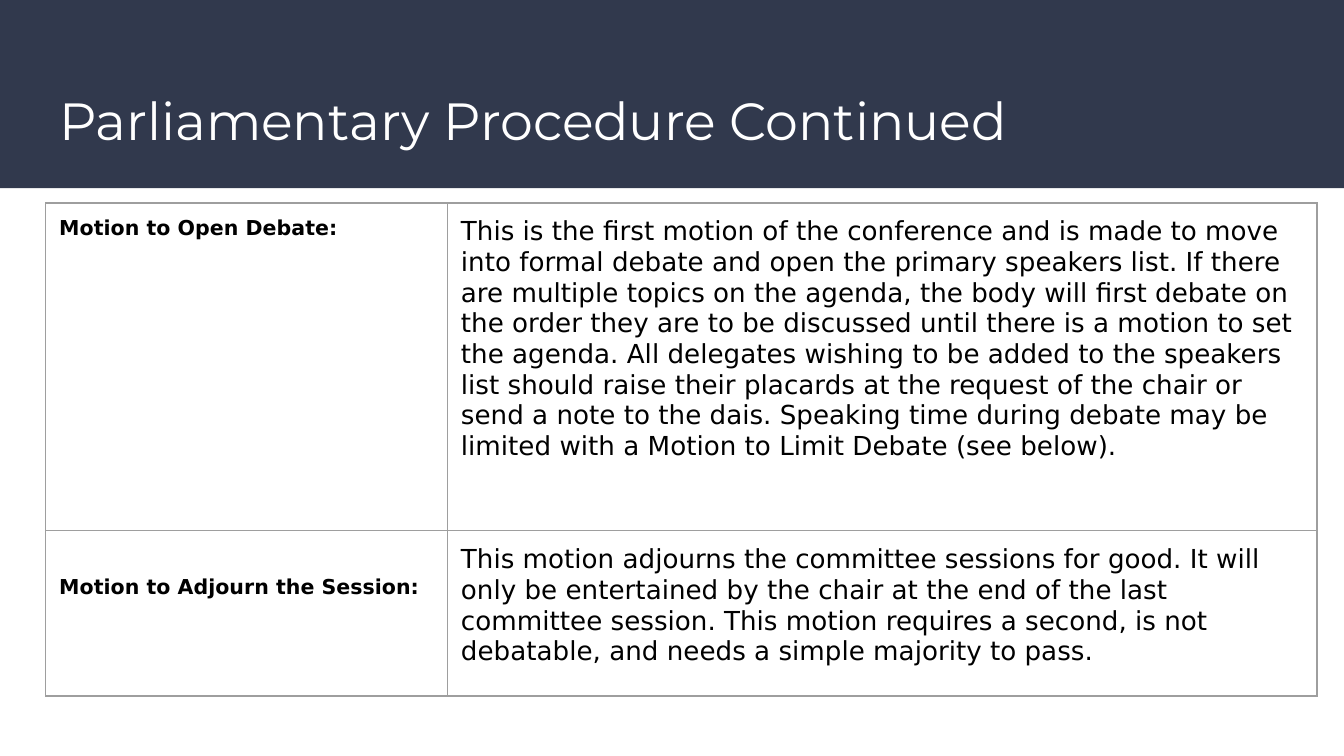
"""Build the parliamentary procedure slide with its table of motions."""
from dataclasses import dataclass

from lxml import etree
from pptx import Presentation
from pptx import util as u
from pptx.dml.color import RGBColor
from pptx.enum import shapes, text
from pptx.oxml.ns import qn

TITLE = "Parliamentary Procedure Continued"
MOTIONS = [
    ("Motion to Open Debate:",
     "This is the first motion of the conference and is made to move into formal "
     "debate and open the primary speakers list. If there are multiple topics on "
     "the agenda, the body will first debate on the order they are to be discussed "
     "until there is a motion to set the agenda. All delegates wishing to be added "
     "to the speakers list should raise their placards at the request of the chair "
     "or send a note to the dais. Speaking time during debate may be limited with "
     "a Motion to Limit Debate (see below)."),
    ("Motion to Adjourn the Session:",
     "This motion adjourns the committee sessions for good. It will only be "
     "entertained by the chair at the end of the last committee session. This "
     "motion requires a second, is not debatable, and needs a simple majority to pass."),
]
WIDTH = 10
HEIGHT = WIDTH * 9 / 16
MARGIN, INSET = 0.34, 0.1
BAND_HEIGHT = 1.4
TABLE_TOP = 1.51
COLUMNS = (2.99, 6.47)
ROWS = (2.44, 1.23)
NAME_DROPS = (0, 0.23)


@dataclass(frozen=True)
class Theme:
    band: str = "31394D"
    paper: str = "FFFFFF"
    ink: str = "000000"
    rule: str = "9E9E9E"
    rule_width: float = 0.75
    title_font: str = "Montserrat"
    body_font: str = "DejaVu Sans"
    title_size: int = 28
    name_size: int = 11
    body_size: int = 14


THEME = Theme()


def style(frame, font, size, color, bold=False):
    for para in frame.paragraphs:
        para.alignment = text.PP_ALIGN.LEFT
        for span in para.runs:
            span.font.name = font
            span.font.size = u.Pt(size)
            span.font.bold = bold
            span.font.color.rgb = RGBColor.from_string(color)


def set_insets(box):
    box.margin_left = box.margin_right = u.Inches(INSET)
    box.margin_top = box.margin_bottom = u.Inches(INSET)


def add_borders(cell):
    properties = cell._tc.get_or_add_tcPr()
    for side in ("a:lnL", "a:lnR", "a:lnT", "a:lnB"):
        line = etree.SubElement(properties, qn(side), w=str(u.Pt(THEME.rule_width)))
        fill = etree.SubElement(line, qn("a:solidFill"))
        etree.SubElement(fill, qn("a:srgbClr"), val=THEME.rule)


def add_header(page):
    band = page.shapes.add_shape(
        shapes.MSO_SHAPE.RECTANGLE, 0, 0, u.Inches(WIDTH), u.Inches(BAND_HEIGHT))
    band.shadow.inherit = False
    band.fill.solid()
    band.fill.fore_color.rgb = RGBColor.from_string(THEME.band)
    band.line.fill.background()
    title = page.shapes.title
    band._element.addnext(title._element)
    title.left, title.top = u.Inches(MARGIN), u.Inches(0.55)
    title.width, title.height = u.Inches(WIDTH - 2 * MARGIN), u.Inches(0.68)
    frame = title.text_frame
    frame.text = TITLE
    frame.word_wrap = True
    frame.auto_size = text.MSO_AUTO_SIZE.NONE
    frame.vertical_anchor = text.MSO_ANCHOR.MIDDLE
    set_insets(frame)
    style(frame, THEME.title_font, THEME.title_size, THEME.paper)


def add_motions(page):
    table = page.shapes.add_table(
        len(ROWS), len(COLUMNS), u.Inches(MARGIN), u.Inches(TABLE_TOP),
        u.Inches(sum(COLUMNS)), u.Inches(sum(ROWS))).table
    table.first_row = table.horz_banding = False
    for column, width in zip(table.columns, COLUMNS):
        column.width = u.Inches(width)
    for index, (motion, height, drop) in enumerate(zip(MOTIONS, ROWS, NAME_DROPS)):
        table.rows[index].height = u.Inches(height)
        sizes = (THEME.name_size, THEME.body_size)
        for cell, words, size in zip(table.rows[index].cells, motion, sizes):
            cell.text_frame.text = words
            set_insets(cell)
            add_borders(cell)
            cell.fill.solid()
            cell.fill.fore_color.rgb = RGBColor.from_string(THEME.paper)
            style(cell.text_frame, THEME.body_font, size, THEME.ink,
                  bold=size == THEME.name_size)
        table.cell(index, 0).margin_top = u.Inches(INSET + drop)


def main():
    deck = Presentation()
    deck.slide_width, deck.slide_height = u.Inches(WIDTH), u.Inches(HEIGHT)
    page = deck.slides.add_slide(deck.slide_layouts[5])
    add_header(page)
    add_motions(page)
    deck.save("out.pptx")


if __name__ == "__main__":
    main()
